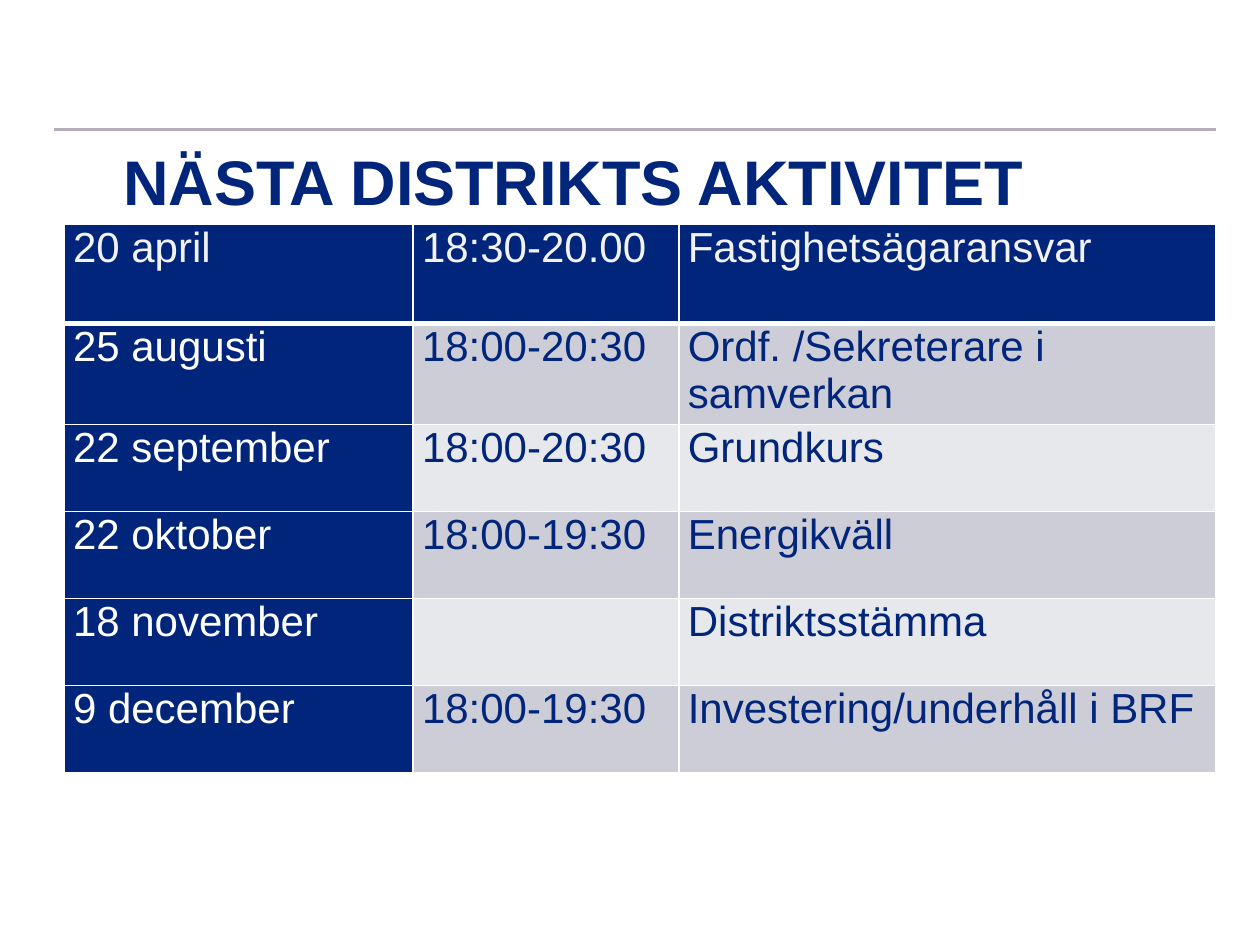
from lxml import etree
from pptx import Presentation
from pptx.dml.color import RGBColor
from pptx.enum.shapes import MSO_CONNECTOR
from pptx.enum.text import MSO_ANCHOR
from pptx.oxml.ns import qn
from pptx.util import Inches, Pt

STRAIGHT = MSO_CONNECTOR.STRAIGHT
BOTTOM = MSO_ANCHOR.BOTTOM

COLORS = {
    "navy": "00257A",
    "rule": "B5ACBD",
    "white": "FFFFFF",
    "header_text": "F2F2F2",
    "band_dark": "CCCDD7",
    "band_light": "E7E8EC",
}

ACTIVITIES = [
    ("20 april", "18:30-20.00", "Fastighetsägaransvar"),
    ("25 augusti", "18:00-20:30", "Ordf. /Sekreterare i samverkan"),
    ("22 september", "18:00-20:30", "Grundkurs"),
    ("22 oktober", "18:00-19:30", "Energikväll"),
    ("18 november", "", "Distriktsstämma"),
    ("9 december", "18:00-19:30", "Investering/underhåll i BRF"),
]
COLUMN_WIDTHS = (2.77, 2.11, 4.26)
HEADER_HEIGHT, ROW_HEIGHT = 0.79, 0.69


def rgb(name):
    return RGBColor.from_string(COLORS[name])


def set_font(font, color, **values):
    for attribute, value in {"name": "Arial", **values}.items():
        setattr(font, attribute, value)
    font.color.rgb = rgb(color)


def add_rule(slide, left, top, width):
    rule = slide.shapes.add_connector(
        STRAIGHT, Inches(left), Inches(top), Inches(left + width), Inches(top))
    rule.line.color.rgb = rgb("rule")
    rule.line.width = Pt(1.5)
    etree.SubElement(rule._element.spPr, qn("a:effectLst"))


def add_title(slide, left, top, width, height):
    title = slide.shapes.add_textbox(
        Inches(left), Inches(top), Inches(width), Inches(height))
    frame = title.text_frame
    frame.word_wrap = True
    frame.vertical_anchor = BOTTOM
    run = frame.paragraphs[0].add_run()
    run.text = "NÄSTA DISTRIKTS AKTIVITET"
    set_font(run.font, "navy", size=Pt(36), bold=True)


def add_borders(cell, bottom_width):
    properties = cell._tc.get_or_add_tcPr()
    for side, width in {"L": 1, "R": 1, "T": 1, "B": bottom_width}.items():
        border = etree.SubElement(properties, qn(f"a:ln{side}"), w=str(Pt(width)))
        fill = etree.SubElement(border, qn("a:solidFill"))
        etree.SubElement(fill, qn("a:srgbClr"), val=COLORS["white"])


def cell_colors(row, column):
    """Return the fill and text colours of a cell."""
    if row == 0:
        return "navy", "header_text"
    if column == 0:
        return "navy", "white"
    return ("band_dark" if row % 2 else "band_light"), "navy"


def fill_cell(cell, text, row, column):
    margins = {"margin_left": 0.07, "margin_top": 0,
               "margin_right": 0.07, "margin_bottom": 0}
    for attribute, value in margins.items():
        setattr(cell, attribute, Inches(value))
    # Borders must precede the fill in the cell properties
    add_borders(cell, bottom_width=3 if row == 0 else 1)
    fill_color, text_color = cell_colors(row, column)
    cell.fill.solid()
    cell.fill.fore_color.rgb = rgb(fill_color)
    if text:
        run = cell.text_frame.paragraphs[0].add_run()
        run.text = text
        set_font(run.font, text_color, size=Pt(24), bold=False)


def add_schedule(slide, left, top, width, height):
    schedule = slide.shapes.add_table(
        len(ACTIVITIES), len(COLUMN_WIDTHS),
        Inches(left), Inches(top), Inches(width), Inches(height)).table
    for column, column_width in zip(schedule.columns, COLUMN_WIDTHS):
        column.width = Inches(column_width)
    for row, activity in enumerate(ACTIVITIES):
        schedule.rows[row].height = Inches(ROW_HEIGHT if row else HEADER_HEIGHT)
        for column, text in enumerate(activity):
            fill_cell(schedule.cell(row, column), text, row, column)


def main():
    presentation = Presentation()
    presentation.slide_width = Inches(10)
    presentation.slide_height = Inches(7.5)
    slide = presentation.slides.add_slide(presentation.slide_layouts[6])

    # Rule above the title
    add_rule(slide, 0.43, 1.03, 9.22)
    # Title
    add_title(slide, 0.88, 1.07, 8.77, 0.71)
    # Activity schedule
    add_schedule(slide, 0.51, 1.78, sum(COLUMN_WIDTHS),
                 HEADER_HEIGHT + ROW_HEIGHT * (len(ACTIVITIES) - 1))

    presentation.save("out.pptx")


if __name__ == "__main__":
    main()
